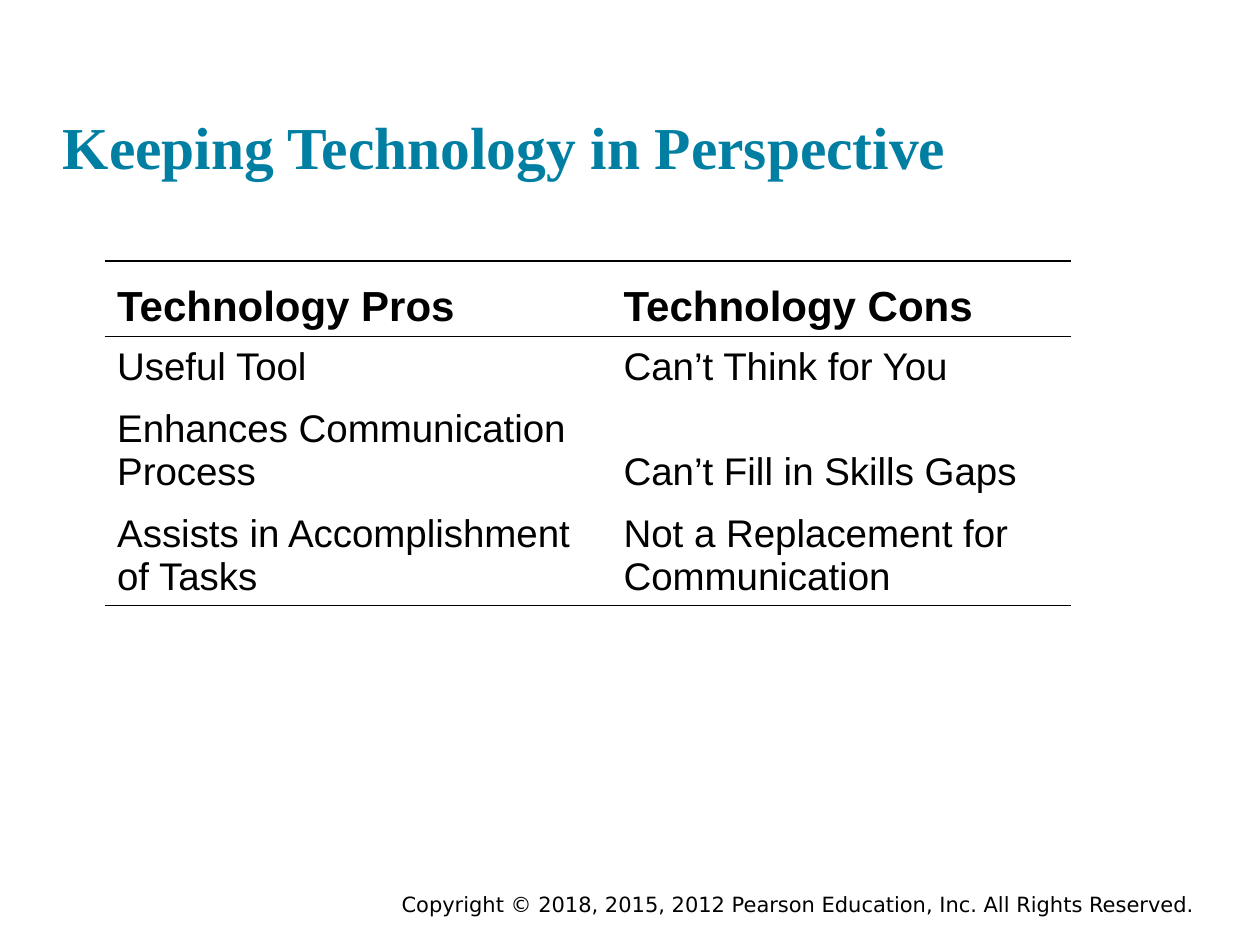
"""Build the slide that sets the pros of technology against its cons."""
from dataclasses import dataclass

from lxml import etree
from pptx import Presentation
from pptx import util as u
from pptx.dml.color import RGBColor
from pptx.enum import text
from pptx.oxml.ns import qn


@dataclass(frozen=True)
class Style:
    name: str
    size: int
    color: str = "000000"
    bold: bool = False


@dataclass(frozen=True)
class Theme:
    title: Style = Style("Times New Roman", 34, "007FA3", True)
    head: Style = Style("Arial", 24, bold=True)
    body: Style = Style("Arial", 22)
    footer: Style = Style("DejaVu Sans", 12)
    rule: str = "000000"
    rule_width: int = 1
    fill: str = "FFFFFF"


@dataclass(frozen=True)
class Label:
    words: str
    box: tuple[float, float, float, float]
    style: Style
    frame: dict
    align: text.PP_ALIGN


THEME = Theme()
NO_INSETS = {f"margin_{side}": 0 for side in ("left", "right", "top", "bottom")}
LABELS = [
    Label("Copyright © 2018, 2015, 2012 Pearson Education, Inc. All Rights Reserved.",
          (1.75, 7.03, 7.83, 0.3), THEME.footer, {}, text.PP_ALIGN.RIGHT),
    Label("Keeping Technology in Perspective", (0.5, 0.24, 8.67, 1.2), THEME.title,
          {"vertical_anchor": text.MSO_ANCHOR.BOTTOM, **NO_INSETS}, text.PP_ALIGN.LEFT),
]
TABLE_LEFT, TABLE_TOP = 0.83, 2.07
COLUMN_WIDTHS = (4.02, 3.65)
ROW_HEIGHTS = (0.6, 0.45, 0.8, 0.82)
ROWS = [
    ("Technology Pros", "Technology Cons"),
    ("Useful Tool", "Can’t Think for You"),
    ("Enhances Communication Process", "Can’t Fill in Skills Gaps"),
    ("Assists in Accomplishment of Tasks", "Not a Replacement for Communication"),
]


def write(tf, words: str, style: Style, align=text.PP_ALIGN.LEFT) -> None:
    """Put one styled run in a text frame."""
    p = tf.paragraphs[0]
    p.alignment = align
    r = p.add_run()
    r.text = words
    for key in ("name", "size", "bold"):
        value = getattr(style, key)
        setattr(r.font, key, u.Pt(value) if key == "size" else value)
    r.font.color.rgb = RGBColor.from_string(style.color)


def add_label(s, label: Label) -> None:
    """Add a text box."""
    tf = s.shapes.add_textbox(*map(u.Inches, label.box)).text_frame
    for key, value in {"word_wrap": True, **label.frame}.items():
        setattr(tf, key, value)
    write(tf, label.words, label.style, label.align)


def set_borders(cell, ruled: set[str]) -> None:
    """Rule the given sides of a cell and clear the others."""
    props = cell._tc.get_or_add_tcPr()
    for side in "LRTB":
        ln = etree.SubElement(props, qn(f"a:ln{side}"))
        if side in ruled:
            ln.set("w", str(u.Pt(THEME.rule_width)))
            fill = etree.SubElement(ln, qn("a:solidFill"))
            etree.SubElement(fill, qn("a:srgbClr"), val=THEME.rule)
        else:
            etree.SubElement(ln, qn("a:noFill"))


def add_comparison(s) -> None:
    """Add the table, ruled around its header and at its foot."""
    table = s.shapes.add_table(
        len(ROWS), len(COLUMN_WIDTHS), u.Inches(TABLE_LEFT), u.Inches(TABLE_TOP),
        u.Inches(sum(COLUMN_WIDTHS)), u.Inches(sum(ROW_HEIGHTS))).table
    for key in ("first_row", "horz_banding"):
        setattr(table, key, False)
    for column, width in zip(table.columns, COLUMN_WIDTHS):
        column.width = u.Inches(width)
    rules = {0: {"T", "B"}, 1: {"T"}, len(ROWS) - 1: {"B"}}
    for i, (height, row) in enumerate(zip(ROW_HEIGHTS, ROWS)):
        table.rows[i].height = u.Inches(height)
        for j, words in enumerate(row):
            cell = table.cell(i, j)
            set_borders(cell, rules.get(i, set()))
            cell.fill.solid()
            cell.fill.fore_color.rgb = RGBColor.from_string(THEME.fill)
            cell.vertical_anchor = text.MSO_ANCHOR.BOTTOM
            write(cell.text_frame, words, THEME.body if i else THEME.head)


def main() -> None:
    """Build and save the slide."""
    prs = Presentation()
    prs.slide_width, prs.slide_height = u.Inches(10), u.Inches(7.5)
    s = prs.slides.add_slide(prs.slide_layouts[6])
    for label in LABELS:
        add_label(s, label)
    add_comparison(s)
    prs.save("out.pptx")


if __name__ == "__main__":
    main()
